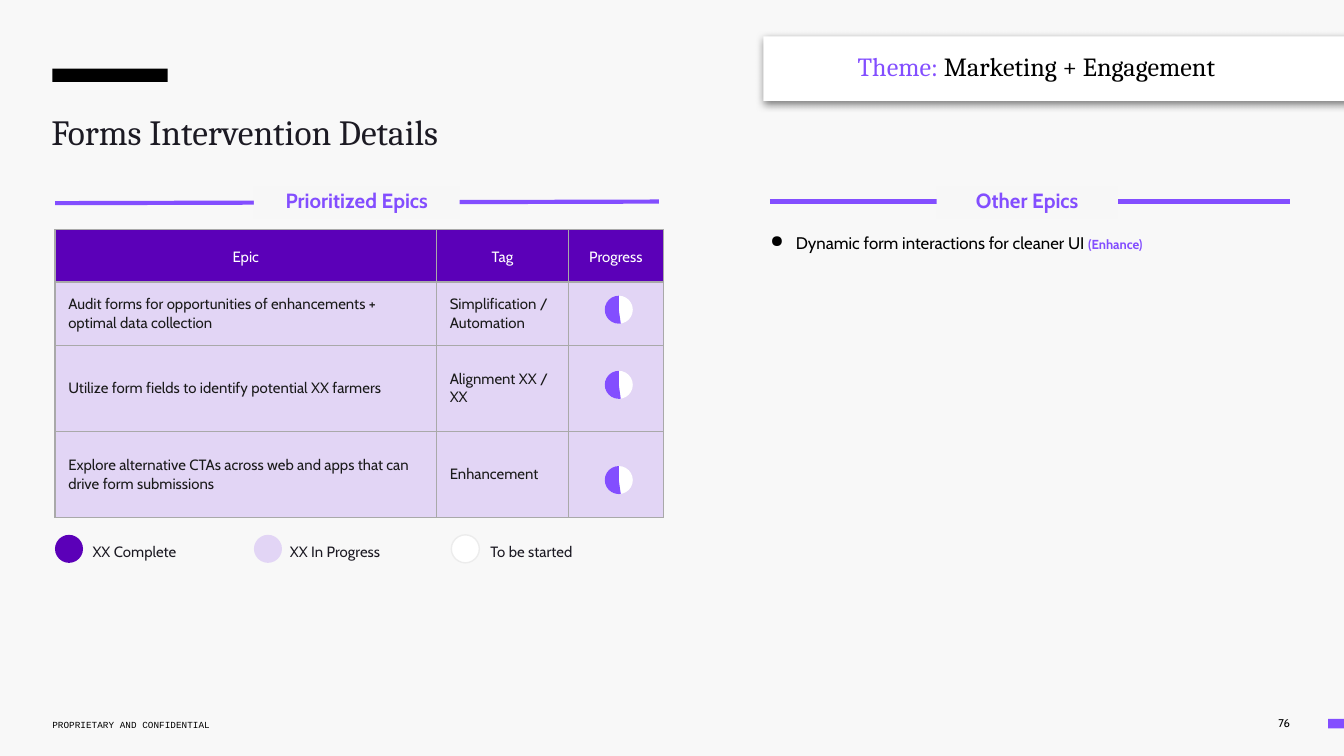
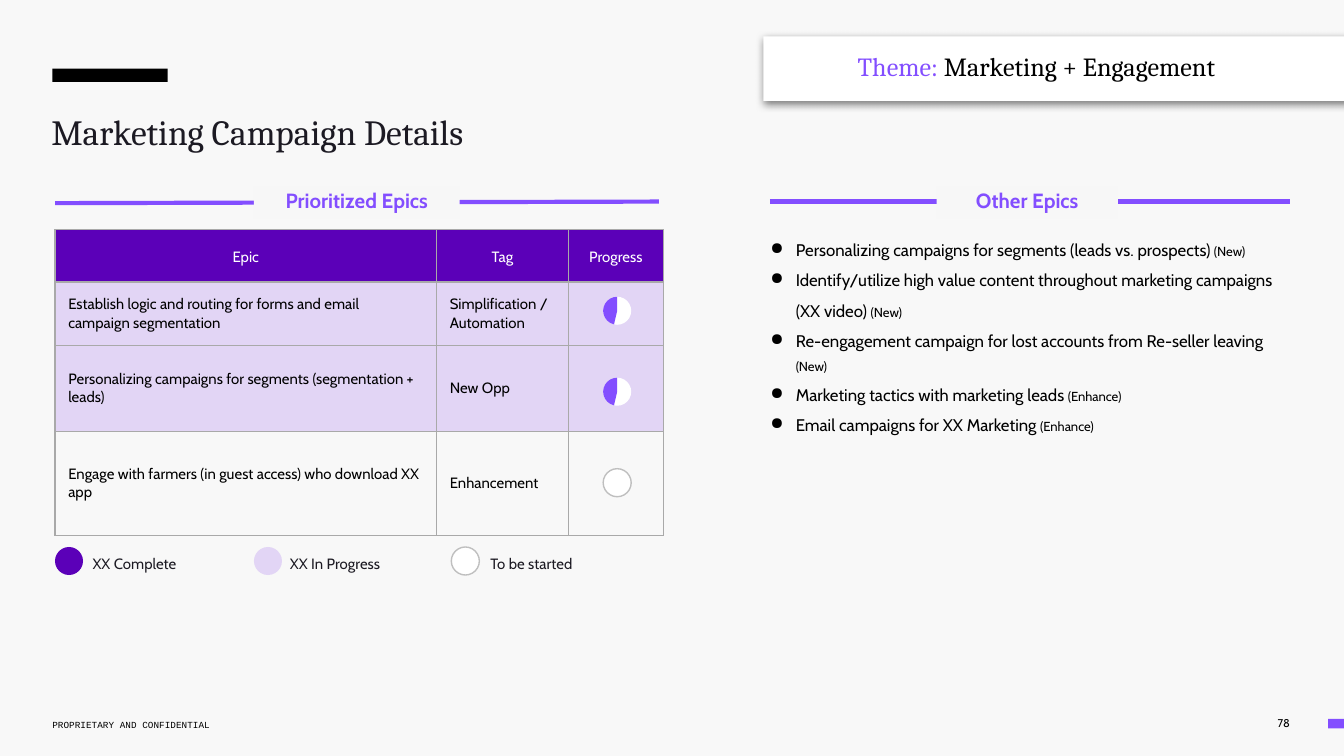
from lxml.etree import SubElement
from pptx import Presentation
from pptx.dml.color import RGBColor
from pptx.enum.shapes import MSO_CONNECTOR, MSO_SHAPE
from pptx.enum.text import MSO_ANCHOR, MSO_AUTO_SIZE, PP_ALIGN
from pptx.oxml.ns import qn
from pptx.util import Cm, Pt

COLORS = {
    "page": "F8F8F8",
    "label": "F7F7F7",
    "white": "FFFFFF",
    "black": "000000",
    "ink": "1C1A23",
    "cell_ink": "1A1A1A",
    "violet": "834EFF",
    "complete": "5B00B8",
    "in_progress": "E2D5F5",
    "grid": "A9A9A9",
    "pale_ring": "ECECEC",
    "gray_ring": "BFBFBF",
}
SANS, SERIF, MONO = "Cabin", "Cambria", "Courier New"
NO_TABLE_STYLE = "{2D5ABB26-0587-4C30-8999-92F81FD0307C}"
DOT_SIZE = 0.53
TABLE_LEFT, TABLE_TOP = 1.04, 4.34
COLUMN_WIDTHS = (7.21, 2.49, 1.8)
HEADINGS = ("Epic", "Tag", "Progress")

SLIDES = [
    {
        "title": "Forms Intervention Details",
        "number": "76",
        "epics": [
            ("Audit forms for opportunities of enhancements + optimal data collection",
             "Simplification / Automation", True),
            ("Utilize form fields to identify potential XX farmers", "Alignment XX / XX", True),
            ("Explore alternative CTAs across web and apps that can drive form submissions",
             "Enhancement", True),
        ],
        "row_heights": (0.99, 1.12, 1.63, 1.63),
        "cell_color": "cell_ink",
        "dot_left": 11.43,
        "dot_tops": (5.59, 7.01, 8.81),
        "pie_start": 49.01,
        "legend_top": 10.11,
        "ring": "pale_ring",
        "others": [("Dynamic form interactions for cleaner UI ", "(Enhance)")],
        "others_spacing": 1.15,
        "note_format": {"size": 7, "color": "violet", "bold": True},
    },
    {
        "title": "Marketing Campaign Details",
        "number": "78",
        "epics": [
            ("Establish logic and routing for forms and email campaign segmentation",
             "Simplification / Automation", True),
            ("Personalizing campaigns for segments (segmentation + leads)", "New Opp", True),
            ("Engage with farmers (in guest access) who download XX app", "Enhancement", False),
        ],
        "row_heights": (0.99, 1.12, 1.63, 1.96),
        "cell_color": "black",
        "dot_left": 11.4,
        "dot_tops": (5.61, 7.14, 8.86),
        "pie_start": 61.76,
        "legend_top": 10.34,
        "ring": "gray_ring",
        "others": [
            ("Personalizing campaigns for segments (leads vs. prospects) ", "(New)"),
            ("Identify/utilize high value content throughout marketing campaigns (XX video) ",
             "(New)"),
            ("Re-engagement campaign for lost accounts from Re-seller leaving ", "(New)"),
            ("Marketing tactics with marketing leads ", "(Enhance)"),
            ("Email campaigns for XX Marketing ", "(Enhance)"),
        ],
        "others_spacing": 1.5,
        "note_format": {"size": 7},
    },
]


def rgb(name):
    return RGBColor.from_string(COLORS[name])


def place(left, top, width, height):
    return Cm(left), Cm(top), Cm(width), Cm(height)


def add_bullet(para):
    properties = para._p.get_or_add_pPr()
    properties.set("marL", str(Cm(0.61)))
    properties.set("indent", str(Cm(-0.48)))
    bullet_color = SubElement(properties, qn("a:buClr"))
    SubElement(bullet_color, qn("a:srgbClr"), val=COLORS["black"])
    SubElement(properties, qn("a:buChar"), char="●")


def write(frame, *paragraphs, size=8, color="ink", font=SANS, bold=False,
          align=PP_ALIGN.LEFT, spacing=1.0, bullet=False):
    for index, content in enumerate(paragraphs):
        para = frame.add_paragraph() if index else frame.paragraphs[0]
        if bullet:
            add_bullet(para)
        para.alignment = align
        para.line_spacing = spacing
        spans = [(content, {})] if isinstance(content, str) else content
        for text, changes in spans:
            look = {"size": size, "color": color, "bold": bold} | changes
            span = para.add_run()
            span.text = text
            span.font.name = font
            span.font.size = Pt(look["size"])
            span.font.bold = look["bold"]
            span.font.color.rgb = rgb(look["color"])


def set_frame(frame, margins=(0, 0, 0, 0), anchor=MSO_ANCHOR.TOP):
    frame.word_wrap = True
    frame.auto_size = MSO_AUTO_SIZE.NONE
    frame.vertical_anchor = anchor
    (frame.margin_left, frame.margin_top,
     frame.margin_right, frame.margin_bottom) = map(Cm, margins)
    return frame


def add_text(page, area, *paragraphs, margins=(0, 0, 0, 0), anchor=MSO_ANCHOR.TOP, **look):
    box = page.shapes.add_textbox(*place(*area))
    write(set_frame(box.text_frame, margins, anchor), *paragraphs, **look)


def add_block(page, area, fill, kind=MSO_SHAPE.RECTANGLE, outline=None):
    block = page.shapes.add_shape(kind, *place(*area))
    block.shadow.inherit = False
    block.fill.solid()
    block.fill.fore_color.rgb = rgb(fill)
    if outline:
        block.line.color.rgb = rgb(outline)
        block.line.width = Pt(0.75)
    else:
        block.line.fill.background()
    return block


def add_dot(page, left, top, fill, kind=MSO_SHAPE.OVAL, outline=None):
    return add_block(page, (left, top, DOT_SIZE, DOT_SIZE), fill, kind, outline)


def add_half_dot(page, left, top, pie_start):
    add_dot(page, left, top, "white")
    pie = add_dot(page, left, top, "violet", MSO_SHAPE.PIE)
    pie.adjustments[0] = pie_start
    pie.adjustments[1] = 162


def add_section_heading(page, text, start, end, label_left, label_width):
    rule = page.shapes.add_connector(MSO_CONNECTOR.STRAIGHT, *map(Cm, start + end))
    rule.line.color.rgb = rgb("violet")
    rule.line.width = Pt(2.25)
    SubElement(rule._element.spPr, qn("a:effectLst"))
    label = add_block(page, (label_left, 3.53, label_width, 0.61), "label")
    write(set_frame(label.text_frame), text, size=11, color="violet", bold=True,
          align=PP_ALIGN.CENTER, spacing=1.04)


def add_theme_banner(page):
    banner = add_block(page, (14.43, 0.69, 11.51, 1.22), "white")
    effects = banner._element.spPr.find(qn("a:effectLst"))
    shadow = SubElement(effects, qn("a:outerShdw"), blurRad=str(Pt(4.5)), dist=str(Pt(1.5)),
                        dir="5400000", algn="bl", rotWithShape="0")
    shade = SubElement(shadow, qn("a:srgbClr"), val=COLORS["black"])
    SubElement(shade, qn("a:alpha"), val="50000")
    add_text(page, (15.54, 0.71, 9.86, 1.12),
             [("Theme:", {"color": "violet"}), (" Marketing + Engagement", {})],
             margins=(0.67, 0.25, 0.25, 0.25), size=14, color="black", font=SERIF)


def add_page_frame(page, title, number):
    add_block(page, (0.99, 1.3, 2.18, 0.25), "black")
    add_block(page, (25.1, 13.59, 0.3, 0.18), "violet")
    add_text(page, (22.48, 13.44, 2.08, 0.46), number, margins=(0.18, 0.1, 0.18, 0.1),
             anchor=MSO_ANCHOR.MIDDLE, size=6, color="black", align=PP_ALIGN.RIGHT)
    add_text(page, (0.99, 13.49, 5.54, 0.38), "PROPRIETARY AND CONFIDENTIAL",
             anchor=MSO_ANCHOR.MIDDLE, size=5, color="black", font=MONO, spacing=1.15)
    heading = page.shapes.title
    heading.left, heading.top, heading.width, heading.height = place(0.97, 1.83, 14.02, 1.63)
    write(set_frame(heading.text_frame, (0, 0.41, 0, 0)), title,
          size=19, font=SERIF, spacing=0.8)
    add_theme_banner(page)


def format_cell(cell, text, fill, **look):
    properties = cell._tc.get_or_add_tcPr()
    for side in ("lnL", "lnR", "lnT", "lnB"):
        border = SubElement(properties, qn(f"a:{side}"), w=str(Pt(0.75)))
        paint = SubElement(border, qn("a:solidFill"))
        SubElement(paint, qn("a:srgbClr"), val=COLORS["grid"])
    if fill:
        cell.fill.solid()
        cell.fill.fore_color.rgb = rgb(fill)
    else:
        cell.fill.background()
    if text:
        cell.vertical_anchor = MSO_ANCHOR.MIDDLE
        cell.margin_left = cell.margin_right = Cm(0.25)
        cell.margin_top = cell.margin_bottom = Cm(0.25)
        write(cell.text_frame, text, **look)


def add_epic_table(page, epics, row_heights, color):
    area = (TABLE_LEFT, TABLE_TOP, sum(COLUMN_WIDTHS), sum(row_heights))
    table = page.shapes.add_table(len(row_heights), len(COLUMN_WIDTHS), *place(*area)).table
    table._tbl.tblPr.find(qn("a:tableStyleId")).text = NO_TABLE_STYLE
    table.first_row = table.horz_banding = False
    for column, width in zip(table.columns, COLUMN_WIDTHS):
        column.width = Cm(width)
    for row, height in zip(table.rows, row_heights):
        row.height = Cm(height)
    for cell, heading in zip(table.rows[0].cells, HEADINGS):
        format_cell(cell, heading, "complete", color="white",
                    align=PP_ALIGN.CENTER, spacing=1.15)
    for index, (epic, tag, started) in enumerate(epics, 1):
        for cell, text in zip(table.rows[index].cells, (epic, tag, "")):
            format_cell(cell, text, "in_progress" if started else None, color=color)


def add_legend(page, top, ring):
    entries = (
        ("XX Complete", 1.04, 1.65, "complete", None),
        ("XX In Progress", 4.8, 5.38, "in_progress", None),
        ("To be started", 8.53, 9.17, "white", ring),
    )
    for text, dot_left, text_left, fill, outline in entries:
        add_dot(page, dot_left, top, fill, outline=outline)
        add_text(page, (text_left, top, 3.45, DOT_SIZE), text,
                 margins=(0.1, 0.1, 0.1, 0.1), spacing=1.15)


def add_details_slide(deck, content):
    page = deck.slides.add_slide(deck.slide_layouts[5])
    add_page_frame(page, content["title"], content["number"])
    add_section_heading(page, "Prioritized Epics", (1.04, 3.84), (12.45, 3.81), 4.8, 3.89)
    add_section_heading(page, "Other Epics", (14.55, 3.81), (24.38, 3.81), 17.7, 3.43)
    add_epic_table(page, content["epics"], content["row_heights"], content["cell_color"])
    for (_, _, started), top in zip(content["epics"], content["dot_tops"]):
        if started:
            add_half_dot(page, content["dot_left"], top, content["pie_start"])
        else:
            add_dot(page, content["dot_left"], top, "white", outline=content["ring"])
    add_legend(page, content["legend_top"], content["ring"])
    others = [[(text, {}), (note, content["note_format"])] for text, note in content["others"]]
    add_text(page, (14.43, TABLE_TOP, 9.96, 7.7), *others, size=9, color="black",
             spacing=content["others_spacing"], bullet=True)


def main():
    deck = Presentation()
    deck.slide_width, deck.slide_height = Cm(25.4), Cm(14.29)
    backdrop = deck.slide_master.background.fill
    backdrop.solid()
    backdrop.fore_color.rgb = rgb("page")
    for content in SLIDES:
        add_details_slide(deck, content)
    deck.save("out.pptx")


if __name__ == "__main__":
    main()
